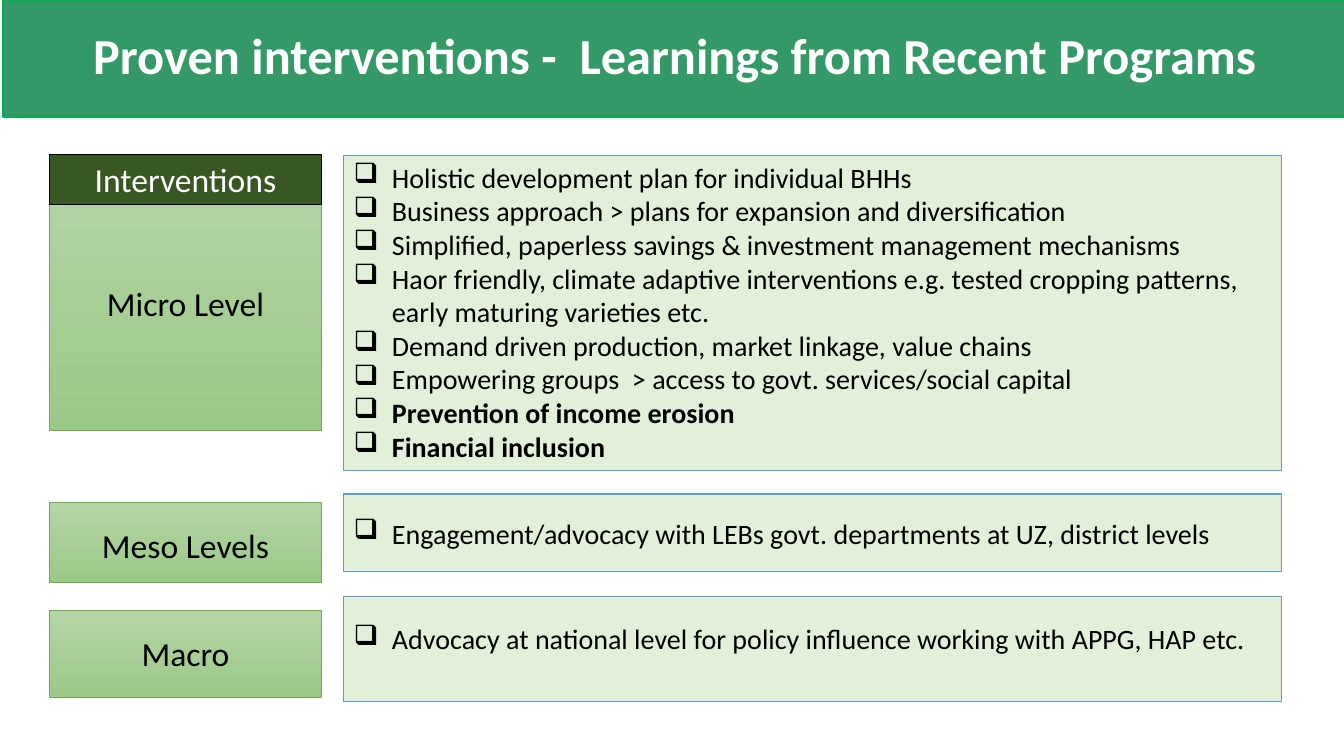
import pptx
import pptx.util
import pptx.dml.color
import pptx.enum.shapes
import pptx.enum.text
from lxml import etree
from pptx.oxml.ns import qn
from pptx.util import Inches

ALIGN = pptx.enum.text.PP_ALIGN
ANCHOR = pptx.enum.text.MSO_ANCHOR


def color(value):
    return pptx.dml.color.RGBColor.from_string(value)


def write(p, text, size=20, ink="000000", bold=False, align=ALIGN.LEFT, spacing=None):
    p.alignment = align
    if spacing:
        p.line_spacing = spacing
    r = p.add_run()
    r.text = text
    r.font.name = "Calibri"
    r.font.size = pptx.util.Pt(size)
    r.font.bold = bold
    r.font.color.rgb = color(ink)


def add_bullet(p, indent=0.38):
    """Give the paragraph a hanging box bullet."""
    pPr = p._p.get_or_add_pPr()
    pPr.set("marL", str(Inches(indent)))
    pPr.set("indent", str(-Inches(indent)))
    etree.SubElement(pPr, qn("a:buChar")).set("char", "❑")


class InterventionSlide:
    LEVEL_LEFT, LEVEL_WIDTH = 0.49, 2.7
    DETAIL_LEFT, DETAIL_WIDTH = 3.41, 9.3
    GRADIENT = ("B5D5A7", "9CC987")

    def __init__(self, prs):
        self.s = prs.slides.add_slide(prs.slide_layouts[5])

    def style(self, sp, fill, line, width):
        """Fill and outline a shape; a pair of colours makes a downward gradient."""
        if isinstance(fill, tuple):
            sp.fill.gradient()
            sp.fill.gradient_angle = 270
            for stop, shade in zip(sp.fill.gradient_stops, fill):
                stop.color.rgb = color(shade)
        else:
            sp.fill.solid()
            sp.fill.fore_color.rgb = color(fill)
        sp.line.color.rgb = color(line)
        sp.line.width = pptx.util.Pt(width)

    def title(self, text):
        sp = self.s.shapes.title
        sp.left, sp.top = Inches(0.03), Inches(0)
        sp.width, sp.height = Inches(13.33), Inches(1.16)
        self.style(sp, "339966", "00B050", 1)
        tf = sp.text_frame
        tf.auto_size = pptx.enum.text.MSO_AUTO_SIZE.NONE
        tf.vertical_anchor = ANCHOR.MIDDLE
        write(tf.paragraphs[0], text, size=36, ink="FFFFFF", bold=True,
              align=ALIGN.CENTER, spacing=0.9)

    def box(self, left, top, width, height, fill, line, line_width, inset):
        """Add a rectangle with top-anchored text and return its text frame."""
        sp = self.s.shapes.add_shape(
            pptx.enum.shapes.MSO_SHAPE.RECTANGLE,
            Inches(left), Inches(top), Inches(width), Inches(height))
        sp.shadow.inherit = False
        self.style(sp, fill, line, line_width)
        tf = sp.text_frame
        tf.word_wrap = True
        tf.vertical_anchor = ANCHOR.TOP
        tf.margin_top = Inches(inset)
        return tf

    def level(self, text, top, height, inset, fill=GRADIENT, line="70AD47", ink="000000"):
        tf = self.box(self.LEVEL_LEFT, top, self.LEVEL_WIDTH, height, fill, line, 0.5, inset)
        write(tf.paragraphs[0], text, size=24, ink=ink, align=ALIGN.CENTER)

    def details(self, items, top, height, inset=0.05, bold_items=()):
        tf = self.box(self.DETAIL_LEFT, top, self.DETAIL_WIDTH, height,
                      "E2F0D9", "5B9BD5", 1, inset)
        for i, item in enumerate(items):
            p = tf.paragraphs[0] if i == 0 else tf.add_paragraph()
            add_bullet(p)
            write(p, item, bold=item in bold_items)


def main():
    prs = pptx.Presentation()
    prs.slide_width, prs.slide_height = Inches(13.33), Inches(7.5)
    slide = InterventionSlide(prs)
    slide.title("Proven interventions -  Learnings from Recent Programs")

    slide.level("Micro Level", 1.61, 2.66, inset=1.2)
    slide.level("Meso Levels", 4.98, 0.8, inset=0.23)
    slide.level("Macro", 6.06, 0.86, inset=0.22)
    slide.level("Interventions", 1.53, 0.5, inset=0.05,
                fill="385723", line="000000", ink="FFFFFF")

    priorities = ["Prevention of income erosion", "Financial inclusion"]
    slide.details([
        "Holistic development plan for individual BHHs",
        "Business approach > plans for expansion and diversification",
        "Simplified, paperless savings & investment management mechanisms",
        "Haor friendly, climate adaptive interventions e.g. tested cropping patterns, "
        "early maturing varieties etc.",
        "Demand driven production, market linkage, value chains",
        "Empowering groups  > access to govt. services/social capital",
        *priorities,
    ], 1.54, 3.13, bold_items=priorities)
    slide.details(["Engagement/advocacy with LEBs govt. departments at UZ, district levels"],
                  4.9, 0.77, inset=0.22)
    slide.details(["Advocacy at national level for policy influence working with APPG, HAP etc."],
                  5.92, 1.04, inset=0.25)
    prs.save("out.pptx")


if __name__ == "__main__":
    main()
